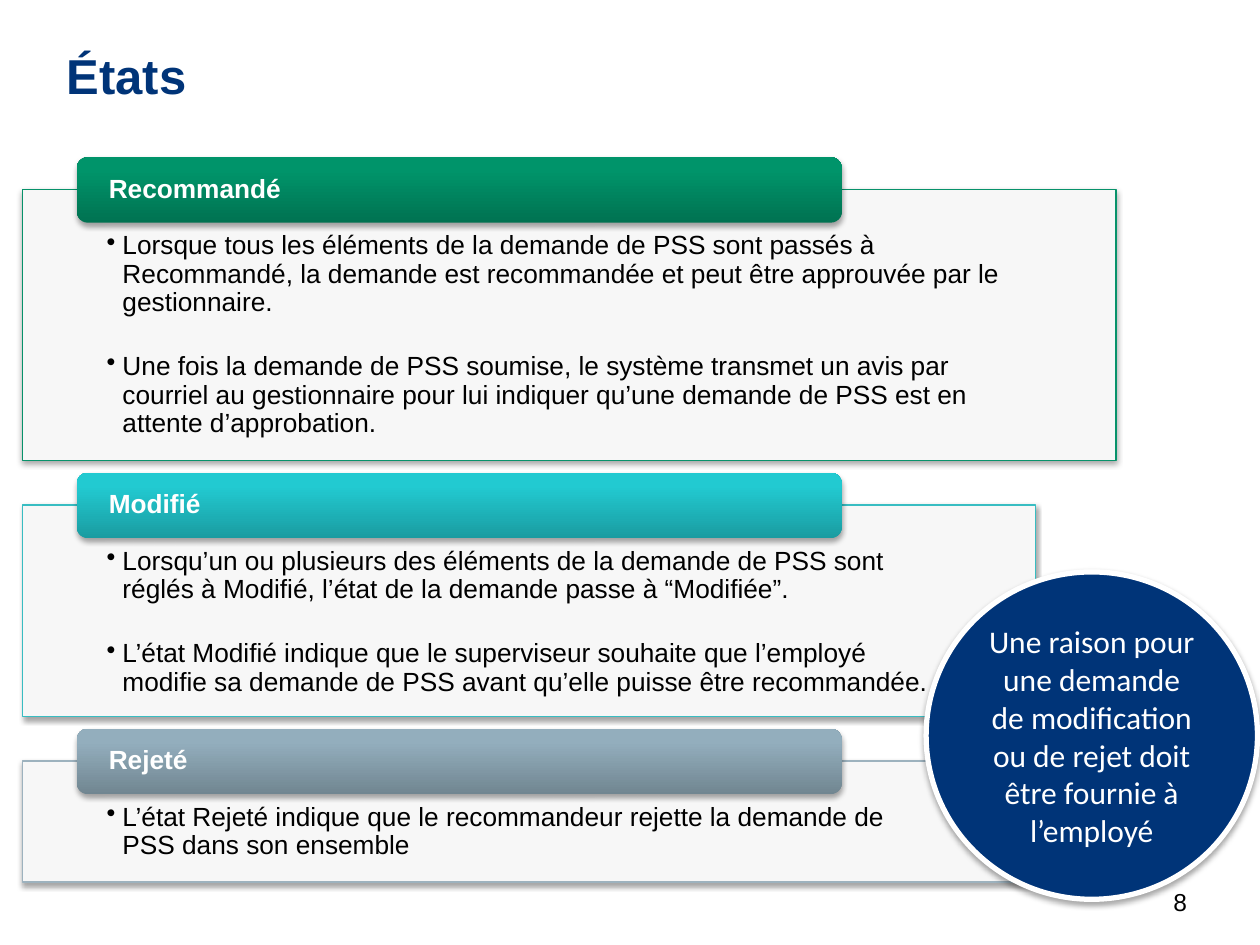
from pptx import Presentation
from pptx.dml.color import RGBColor
from pptx.enum.shapes import MSO_SHAPE
from pptx.enum.text import MSO_ANCHOR, PP_ALIGN
from pptx.oxml import parse_xml
from pptx.oxml.ns import nsdecls
from pptx.util import Cm, Pt


def style(par, size, color, bold=False, name="Arial"):
    par.font.size = Pt(size)
    par.font.bold = bold
    par.font.name = name
    par.font.color.rgb = RGBColor.from_string(color)


def shade(shape):
    shape.shadow.inherit = False
    shape._element.spPr.find("{*}effectLst").append(parse_xml(
        f'<a:outerShdw {nsdecls("a")} blurRad="40000" dist="23000" dir="5400000" rotWithShape="0">'
        '<a:srgbClr val="000000"><a:alpha val="35000"/></a:srgbClr></a:outerShdw>'))


prs = Presentation()
prs.slide_width, prs.slide_height = Cm(25.4), Cm(19.05)
slide = prs.slides.add_slide(prs.slide_layouts[5])
shapes = slide.shapes

title = shapes.title
title.left, title.top, title.width, title.height = Cm(1.09), Cm(0.76), Cm(23.2), Cm(1.52)
title.text_frame.text = "États"
title.text_frame.vertical_anchor = MSO_ANCHOR.MIDDLE
head = title.text_frame.paragraphs[0]
head.alignment = PP_ALIGN.LEFT
style(head, 28, "003478", True)

states = [
    ("Recommandé", 3.82, 22.05, 5.46, "07926A", "007251", "00946A", [
        "Lorsque tous les éléments de la demande de PSS sont passés à Recommandé, "
        "la demande est recommandée et peut être approuvée par le gestionnaire.",
        "Une fois la demande de PSS soumise, le système transmet un avis par courriel au "
        "gestionnaire pour lui indiquer qu’une demande de PSS est en attente d’approbation."]),
    ("Modifié", 10.18, 20.42, 4.27, "38BDC2", "1A9CA1", "22CAD1", [
        "Lorsqu’un ou plusieurs des éléments de la demande de PSS sont réglés à Modifié, "
        "l’état de la demande passe à “Modifiée”.",
        "L’état Modifié indique que le superviseur souhaite que l’employé modifie "
        "sa demande de PSS avant qu’elle puisse être recommandée."]),
    ("Rejeté", 15.34, 20.52, 2.44, "9DB2BE", "718691", "93AEBD", [
        "L’état Rejeté indique que le recommandeur rejette la demande de \vPSS dans son ensemble"]),
]

for name, top, width, height, edge, dark, light, items in states:
    panel = shapes.add_shape(MSO_SHAPE.RECTANGLE, Cm(0.45), Cm(top), Cm(width), Cm(height))
    panel.fill.solid()
    panel.fill.fore_color.rgb = RGBColor.from_string("F7F7F7")
    panel.line.color.rgb = RGBColor.from_string(edge)
    panel.line.width = Pt(0.75)
    shade(panel)
    frame = panel.text_frame
    frame.word_wrap = True
    frame.vertical_anchor = MSO_ANCHOR.TOP
    frame.margin_left = frame.margin_right = Cm(1.7)
    frame.margin_top, frame.margin_bottom = Cm(0.86), Cm(0.3)
    for i, item in enumerate(items):
        par = frame.add_paragraph() if i else frame.paragraphs[0]
        par.text = item
        props = par._p.get_or_add_pPr()
        props.set("marL", str(Cm(0.32)))
        props.set("indent", str(-Cm(0.32)))
        props.append(parse_xml(f'<a:buChar {nsdecls("a")} char="•"/>'))
        par.alignment = PP_ALIGN.LEFT
        par.line_spacing = 0.9
        if i:
            par.space_before = Pt(20.5)
        style(par, 15, "000000")

    tab = shapes.add_shape(MSO_SHAPE.ROUNDED_RECTANGLE, Cm(1.55), Cm(top - 0.65), Cm(15.42), Cm(1.32))
    tab.fill.gradient()
    tab.fill.gradient_angle = 90
    for stop, color, place in zip(tab.fill.gradient_stops, (dark, light), (0, 0.8)):
        stop.color.rgb = RGBColor.from_string(color)
        stop.position = place
    tab.line.fill.background()
    shade(tab)
    frame = tab.text_frame
    frame.word_wrap = True
    frame.vertical_anchor = MSO_ANCHOR.MIDDLE
    frame.margin_left = frame.margin_right = Cm(0.58)
    frame.margin_top = frame.margin_bottom = 0
    par = frame.paragraphs[0]
    par.text = name
    par.alignment = PP_ALIGN.LEFT
    par.line_spacing = 0.9
    style(par, 15, "FFFFFF", True)

note = shapes.add_shape(MSO_SHAPE.OVAL, Cm(18.67), Cm(11.53), Cm(6.68), Cm(6.6))
note.fill.solid()
note.fill.fore_color.rgb = RGBColor.from_string("003478")
note.line.color.rgb = RGBColor.from_string("FFFFFF")
note.line.width = Pt(3)
shade(note)
note.text_frame.word_wrap = True
note.text_frame.vertical_anchor = MSO_ANCHOR.MIDDLE
par = note.text_frame.paragraphs[0]
par.text = "Une raison pour une demande de modification ou de rejet doit être fournie à l’employé"
par.alignment = PP_ALIGN.CENTER
style(par, 18, "FFFFFF", name="Calibri")

page = shapes.add_textbox(Cm(18.9), Cm(17.75), Cm(5.28), Cm(0.74))
page.text_frame.word_wrap = True
page.text_frame.margin_top = page.text_frame.margin_bottom = Cm(0.13)
par = page.text_frame.paragraphs[0]
par.text = "8"
par.alignment = PP_ALIGN.RIGHT
style(par, 14, "000000")

prs.save("out.pptx")
